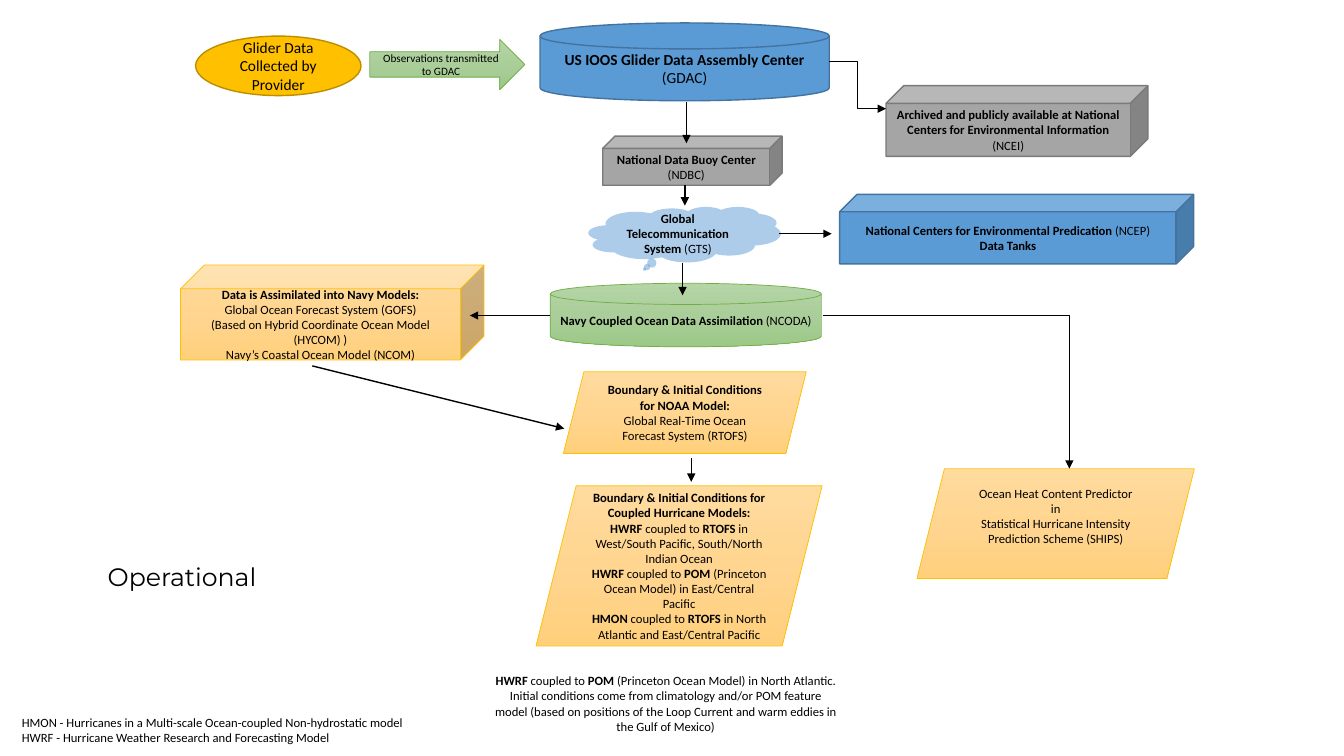
"""Build the slide that maps glider data flow into ocean and storm models."""
from copy import deepcopy
from lxml.etree import SubElement as add_sub
from pptx import Presentation
from pptx.dml.color import RGBColor
from pptx.enum.shapes import MSO_CONNECTOR as Link, MSO_SHAPE as Kind
from pptx.enum.text import MSO_ANCHOR as Anchor, PP_ALIGN as Align
from pptx.oxml.ns import qn
from pptx.util import Cm, Pt

BLACK = RGBColor(0x00, 0x00, 0x00)
GREY = RGBColor(0xA5, 0xA5, 0xA5)
SLATE = RGBColor(0x7A, 0x7A, 0x7A)
BLUE = RGBColor(0x5B, 0x9B, 0xD5)
NAVY = RGBColor(0x43, 0x73, 0x9E)
GOLD = RGBColor(0xFF, 0xC0, 0x00)
BRONZE = RGBColor(0xBD, 0x8E, 0x00)
GREEN = RGBColor(0x70, 0xAD, 0x47)
LEAVES = (RGBColor(0xB5, 0xD5, 0xA7), RGBColor(0xAA, 0xCE, 0x9A),
          RGBColor(0x9C, 0xC9, 0x87))
SANDS = (RGBColor(0xFF, 0xDB, 0x9E), RGBColor(0xFF, 0xD5, 0x90),
         RGBColor(0xFF, 0xD0, 0x7C))


def put_text(frame, lines, size=9, align=Align.CENTER, face="Calibri"):
    frame.word_wrap = True
    for i, line in enumerate(lines):
        para = frame.add_paragraph() if i else frame.paragraphs[0]
        para.alignment = align
        parts = line.split("**")
        mixed = any(parts[::2]) and len(parts) > 1
        for j, part in enumerate(parts):
            if part:
                run = para.add_run()
                run.text = part
                if mixed:
                    run.font.bold = j % 2 == 1
        font = para.font
        font.name, font.size = face, Pt(size)
        font.color.rgb = BLACK
        if not mixed:
            font.bold = len(parts) > 1


def shade(shape, tints):
    fill = shape.fill
    fill.gradient()
    fill.gradient_angle = 270
    first = shape.element.find(".//" + qn("a:gs"))
    first.addnext(deepcopy(first))
    for i, (stop, tint) in enumerate(zip(fill.gradient_stops, tints)):
        stop.position = i / 2
        stop.color.rgb = tint


def add_node(slide, kind, box, fill, edge, lines, size=9):
    shape = slide.shapes.add_shape(kind, *map(Cm, box))
    shape.shadow.inherit = False
    if isinstance(fill, RGBColor):
        shape.fill.solid()
        shape.fill.fore_color.rgb = fill
    else:
        shade(shape, fill)
    if edge is None:
        shape.line.fill.background()
    else:
        shape.line.color.rgb = edge
        shape.line.width = Pt(1 if isinstance(fill, RGBColor) else 0.5)
    shape.text_frame.vertical_anchor = Anchor.MIDDLE
    put_text(shape.text_frame, lines, size)
    return shape


def add_cloud(slide, box, lines):
    cloud = add_node(slide, Kind.CLOUD_CALLOUT, box, BLUE, None, lines)
    tint = cloud.element.spPr.find(".//" + qn("a:srgbClr"))
    add_sub(tint, qn("a:alpha"), val="50000")


def add_arrow(slide, ends, kind=Link.STRAIGHT, width=1):
    arrow = slide.shapes.add_connector(kind, *map(Cm, ends))
    arrow.line.color.rgb = BLACK
    arrow.line.width = Pt(width)
    props = arrow.element.spPr
    add_sub(props.find(qn("a:ln")), qn("a:tailEnd"), type="triangle")
    add_sub(props, qn("a:effectLst"))
    return arrow


def add_turn(slide, ends):
    arrow = add_arrow(slide, ends, Link.ELBOW, 0.5)
    arrow.element.spPr.find(qn("a:prstGeom")).set("prst", "bentConnector2")


def add_note(slide, box, lines, align):
    note = slide.shapes.add_textbox(*map(Cm, box))
    put_text(note.text_frame, lines, align=align)


def set_title(slide, box, text):
    title = slide.shapes.title
    title.left, title.top, title.width, title.height = map(Cm, box)
    title.text_frame.vertical_anchor = Anchor.TOP
    put_text(title.text_frame, [text], 18, Align.LEFT, "Montserrat")


def draw_source(slide):
    add_node(slide, Kind.OVAL, (4.93, 0.91, 4.17, 1.5), GOLD, BRONZE,
             ["Glider Data Collected by Provider"], 11)
    add_node(slide, Kind.RIGHT_ARROW, (9.32, 0.99, 3.91, 1.27), LEAVES, GREEN,
             ["Observations transmitted to GDAC"], 8)
    add_node(slide, Kind.FLOWCHART_MAGNETIC_DISK, (13.61, 0.58, 7.29, 1.96),
             BLUE, NAVY,
             ["**US IOOS Glider Data Assembly Center**", "(GDAC)"], 11)


def draw_centers(slide):
    add_node(slide, Kind.CUBE, (15.19, 3.43, 4.52, 1.24), GREY, SLATE,
             ["**National Data Buoy Center **(NDBC)"])
    add_node(slide, Kind.CUBE, (22.33, 2.16, 6.6, 1.78), GREY, SLATE,
             ["**Archived and publicly available at National Centers for "
              "Environmental Information **(NCEI)"])
    add_cloud(slide, (14.83, 5.21, 4.85, 1.4),
              ["**Global Telecommunication System **(GTS)"])
    add_node(slide, Kind.CUBE, (21.16, 4.9, 8.92, 1.75), BLUE, NAVY,
             ["**National Centers for Environmental Predication **(NCEP)",
              "**Data Tanks**"])


def draw_models(slide):
    add_node(slide, Kind.FLOWCHART_MAGNETIC_DISK, (13.87, 7.14, 6.83, 1.6),
             LEAVES, GREEN,
             ["**Navy Coupled Ocean Data Assimilation **(NCODA)"])
    add_node(slide, Kind.CUBE, (4.55, 6.68, 7.65, 2.39), SANDS, GOLD,
             ["**Data is Assimilated into Navy Models:**",
              "Global Ocean Forecast System (GOFS)",
              "(Based on Hybrid Coordinate Ocean Model (HYCOM) )",
              "Navy’s Coastal Ocean Model (NCOM)"])
    add_node(slide, Kind.PARALLELOGRAM, (14.2, 9.37, 6.12, 2.06), SANDS, GOLD,
             ["**Boundary & Initial Conditions for NOAA Model:**",
              "Global Real-Time Ocean Forecast System (RTOFS)"])
    add_node(slide, Kind.PARALLELOGRAM, (13.51, 12.24, 7.21, 4.04), SANDS, GOLD,
             ["**Boundary & Initial Conditions for Coupled Hurricane Models:**",
              "**HWRF** coupled to **RTOFS** in",
              "West/South Pacific, South/North Indian Ocean",
              "**HWRF **coupled to **POM** (Princeton Ocean Model) in "
              "East/Central Pacific",
              "**HMON **coupled to **RTOFS** in North Atlantic and "
              "East/Central Pacific"])
    ships = add_node(slide, Kind.PARALLELOGRAM, (23.11, 11.81, 6.99, 2.77),
                     SANDS, GOLD,
                     ["Ocean Heat Content Predictor", "in",
                      "Statistical Hurricane Intensity Prediction Scheme "
                      "(SHIPS)"])
    ships.text_frame.margin_bottom = Cm(0.51)


def draw_arrows(slide):
    for ends in ((17.3, 2.57, 17.3, 3.61), (17.26, 4.65, 17.26, 5.18),
                 (17.2, 6.63, 17.2, 7.44), (17.42, 11.53, 17.42, 12.14),
                 (7.87, 9.22, 14.22, 10.8), (13.87, 7.95, 11.84, 7.95),
                 (19.63, 5.89, 20.96, 5.89)):
        add_arrow(slide, ends)
    add_arrow(slide, (20.9, 1.55, 22.33, 2.74), Link.ELBOW)
    add_turn(slide, (20.73, 7.95, 26.95, 11.81))


def main():
    deck = Presentation()
    deck.slide_width, deck.slide_height = Cm(33.87), Cm(19.05)
    slide = deck.slides.add_slide(deck.slide_layouts[5])
    set_title(slide, (2.46, 14.02, 5.94, 1.02), "Operational")
    draw_source(slide)
    draw_centers(slide)
    draw_models(slide)
    draw_arrows(slide)
    add_note(slide, (0.3, 17.88, 10.39, 1.02),
             ["HMON - Hurricanes in a Multi-scale Ocean-coupled "
              "Non-hydrostatic model",
              "HWRF - Hurricane Weather Research and Forecasting Model"],
             Align.LEFT)
    add_note(slide, (12.19, 16.84, 9.17, 1.8),
             ["**HWRF **coupled to **POM** (Princeton Ocean Model) in North "
              "Atlantic. Initial conditions come from climatology and/or POM "
              "feature model (based on positions of the Loop Current and warm "
              "eddies in the Gulf of Mexico)"], Align.CENTER)
    deck.save("out.pptx")


if __name__ == "__main__":
    main()
